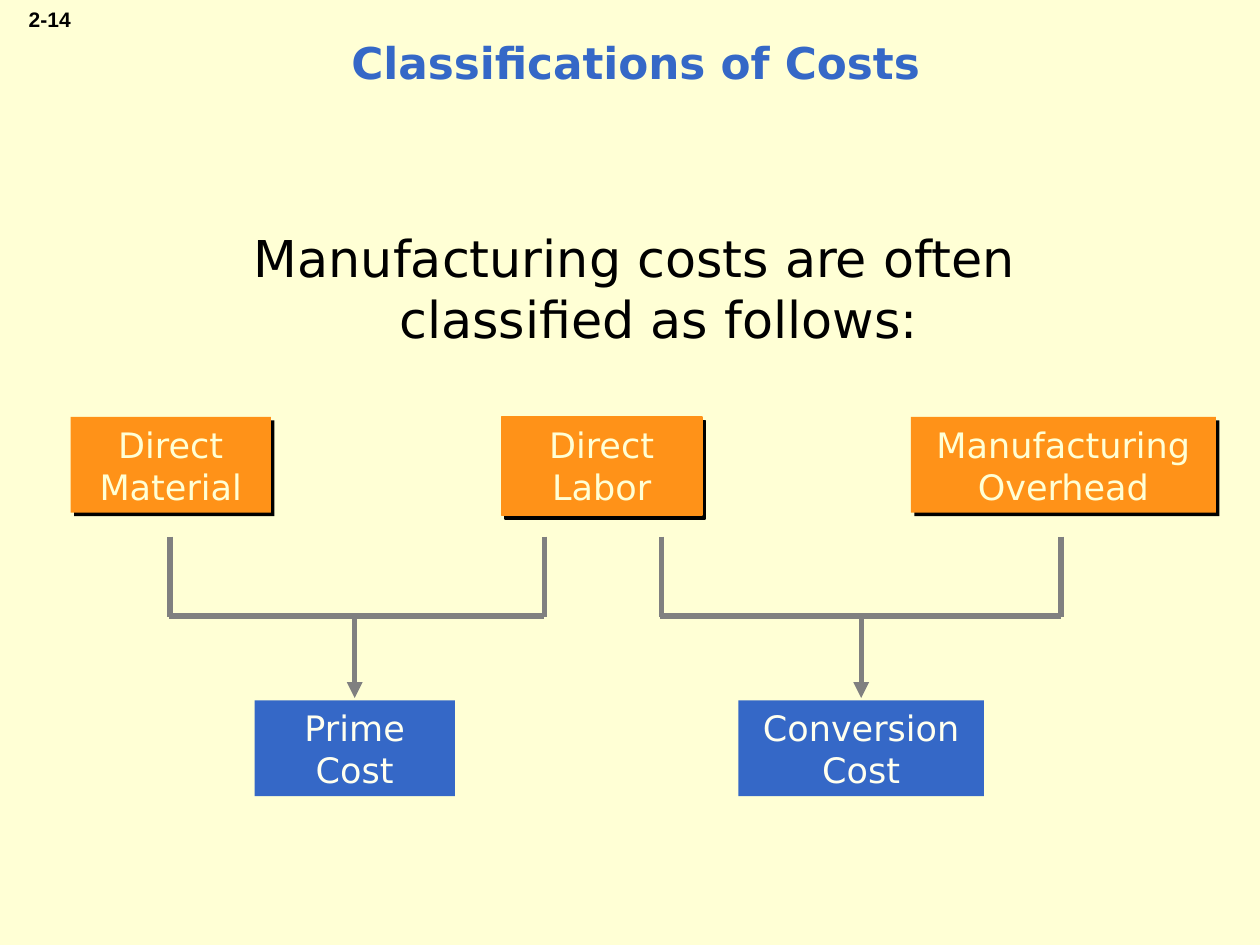
from lxml import etree
from pptx import Presentation
from pptx.dml.color import RGBColor
from pptx.enum.shapes import MSO_CONNECTOR as Connector, MSO_SHAPE as Shape
from pptx.enum.text import MSO_ANCHOR as Anchor, MSO_AUTO_SIZE as AutoSize, PP_ALIGN as Align
from pptx.oxml.ns import qn
from pptx.util import Inches, Pt

CREAM, ORANGE, BLUE, GRAY, BLACK = "FFFFD5", "FF9218", "3568C7", "808080", "000000"
PALE = "FFFFEF"


def set_color(color_format, value):
    if hasattr(color_format, "solid"):
        color_format.solid()
        color_format = color_format.fore_color
    color_format.rgb = RGBColor.from_string(value)


def write(shape, text, size, color, font="DejaVu Sans", bold=False, align=Align.CENTER):
    paragraph = shape.text_frame.paragraphs[0]
    paragraph.text = text
    paragraph.alignment = align
    paragraph.font.name = font
    paragraph.font.size = Pt(size)
    paragraph.font.bold = bold
    set_color(paragraph.font.color, color)
    return paragraph


def place(shape, left, top, width, height):
    shape.left, shape.top = Inches(left), Inches(top)
    shape.width, shape.height = Inches(width), Inches(height)


def add_page_number(slide, left, top, width, height):
    shape = slide.shapes.add_textbox(Inches(left), Inches(top), Inches(width), Inches(height))
    shape.text_frame.word_wrap = False
    write(shape, "2-14", 12, BLACK, "Arial", True, Align.RIGHT)


def fill_title(slide, left, top, width, height):
    shape = slide.shapes.title
    place(shape, left, top, width, height)
    shape.text_frame.vertical_anchor = Anchor.MIDDLE
    shape.text_frame.auto_size = AutoSize.NONE
    write(shape, "Classifications of Costs", 25, BLUE, bold=True)


def fill_body(slide, left, top, width, height):
    shape = slide.placeholders[1]
    place(shape, left, top, width, height)
    shape.text_frame.auto_size = AutoSize.NONE
    paragraph = write(shape, "Manufacturing costs are often\nclassified as follows:", 29, BLACK)
    properties = paragraph._p.get_or_add_pPr()
    properties.set("marL", str(Inches(0.38)))
    properties.set("indent", str(Inches(-0.38)))
    properties.insert(0, etree.Element(qn("a:buNone")))


def add_shadow(shape):
    effects = shape.element.spPr.find(qn("a:effectLst"))
    shadow = etree.SubElement(effects, qn("a:outerShdw"), dist=str(Pt(2.8)),
                              dir="2700000", algn="ctr", rotWithShape="0")
    etree.SubElement(shadow, qn("a:srgbClr"), val=BLACK)


def add_cost_box(slide, text, left, top, width, height, fill, color):
    shape = slide.shapes.add_shape(Shape.RECTANGLE, Inches(left), Inches(top),
                                   Inches(width), Inches(height))
    set_color(shape.fill, fill)
    shape.line.fill.background()
    shape.shadow.inherit = False
    shape.text_frame.word_wrap = True
    shape.text_frame.vertical_anchor = Anchor.TOP
    write(shape, text, 20, color)
    return shape


def add_line(slide, start, end, arrow=False):
    line = slide.shapes.add_connector(Connector.STRAIGHT, *map(Inches, start + end))
    set_color(line.line.fill, GRAY)
    line.line.width = Pt(3)
    if arrow:
        etree.SubElement(line.line._get_or_add_ln(), qn("a:tailEnd"), type="triangle")
    etree.SubElement(line.element.spPr, qn("a:effectLst"))


def add_bracket(slide, left, top, width, height, center):
    right, bottom = left + width, top + height
    for x in (left, right):
        add_line(slide, (x, top), (x, bottom + 0.01))
    add_line(slide, (left - 0.01, bottom), (right, bottom))
    add_line(slide, (center, bottom), (center, bottom + 0.65), arrow=True)


def add_cost_diagram(slide, left, top):
    components = [
        ("Direct\nMaterial", 0, 1.59, 0.76),
        ("Direct\nLabor", 3.42, 1.59, 0.78),
        ("Manufacturing\nOverhead", 6.67, 2.42, 0.76),
    ]
    for text, offset, width, height in components:
        shape = add_cost_box(slide, text, left + offset, top, width, height, ORANGE, CREAM)
        add_shadow(shape)
        if text == "Direct\nLabor":
            set_color(shape.line.fill, ORANGE)
            shape.line.width = Pt(1)

    totals = [
        ("Prime\nCost", 1.46, 1.59, 0.79, 2.97),
        ("Conversion\nCost", 5.3, 1.95, 4.69, 3.17),
    ]
    for text, offset, width, bracket_offset, bracket_width in totals:
        center = left + offset + width / 2
        add_bracket(slide, left + bracket_offset, top + 0.95, bracket_width, 0.63, center)
        add_cost_box(slide, text, left + offset, top + 2.25, width, 0.76, BLUE, PALE)


def main():
    presentation = Presentation()
    presentation.slide_width, presentation.slide_height = Inches(10), Inches(7.5)
    slide = presentation.slides.add_slide(presentation.slide_layouts[1])
    set_color(slide.background.fill, CREAM)
    add_page_number(slide, 0.11, 0, 0.55, 0.3)
    fill_title(slide, 0.17, 0.08, 9.75, 0.83)
    add_cost_diagram(slide, 0.56, 3.31)
    fill_body(slide, 0.5, 1.75, 9.08, 1.25)
    presentation.save("out.pptx")


if __name__ == "__main__":
    main()
